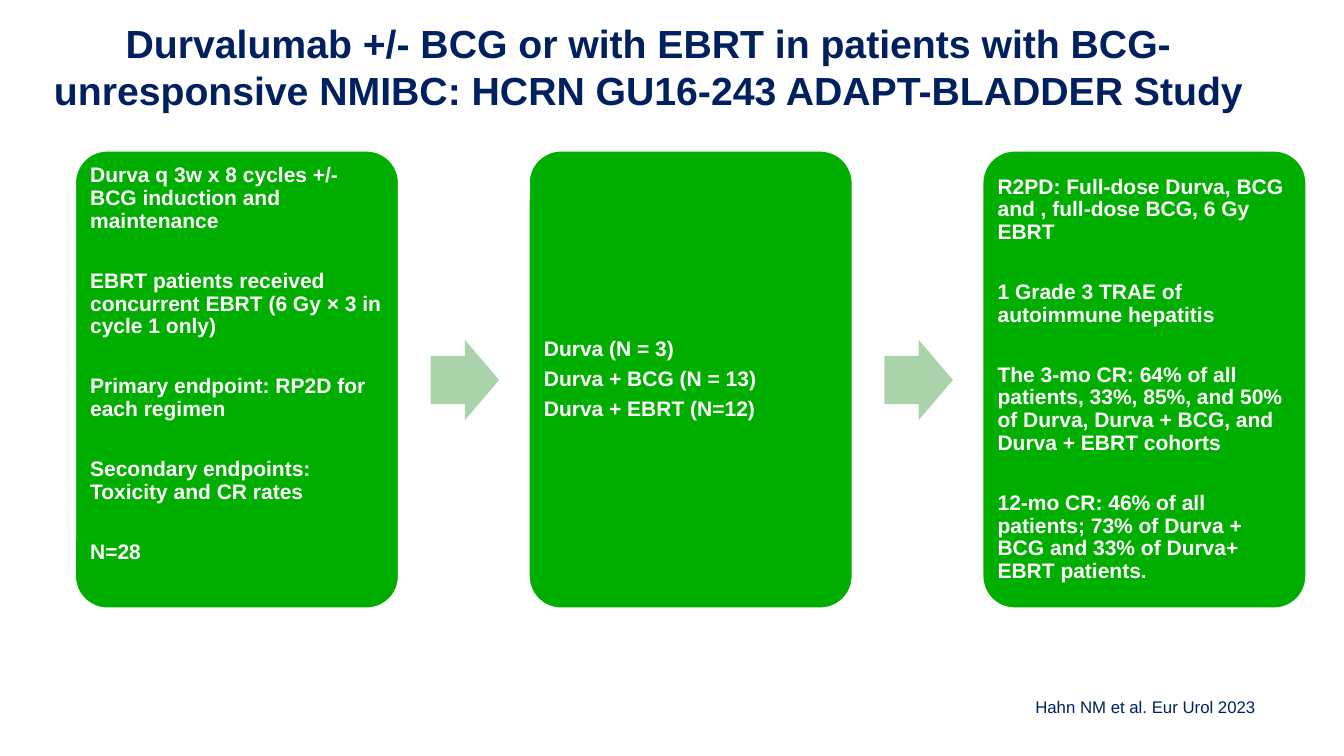
from pptx import Presentation
from pptx.dml.color import RGBColor
from pptx.enum.shapes import MSO_SHAPE as SHAPE
from pptx.enum.text import MSO_ANCHOR as ANCHOR, PP_ALIGN as ALIGN
from pptx.util import Inches, Pt

COLORS = {"navy": "002060", "green": "00AE00", "pale": "ABD3AB", "white": "FFFFFF"}


def rgb(name):
    return RGBColor.from_string(COLORS[name])


def style(paragraph, size, color, bold):
    font = paragraph.font
    font.name, font.size, font.bold = "Arial", Pt(size), bold
    font.color.rgb = rgb(color)


prs = Presentation()
prs.slide_width, prs.slide_height = Inches(13.33), Inches(7.5)
slide = prs.slides.add_slide(prs.slide_layouts[6])

title = slide.shapes.add_textbox(Inches(0.25), Inches(0.25), Inches(12.36), Inches(0.82)).text_frame
title.word_wrap = True
title.vertical_anchor = ANCHOR.MIDDLE
title.margin_left = title.margin_right = Inches(0.11)
title.text = (
    "Durvalumab +/- BCG or with EBRT in patients with BCG-unresponsive NMIBC: "
    "HCRN GU16-243 ADAPT-BLADDER Study"
)
title.paragraphs[0].alignment = ALIGN.CENTER
style(title.paragraphs[0], 28, "navy", True)

design = [
    "Durva q 3w x 8 cycles +/- BCG induction and maintenance",
    "EBRT patients received concurrent EBRT (6 Gy × 3 in cycle 1 only)",
    "Primary endpoint: RP2D for each regimen",
    "Secondary endpoints: Toxicity and CR rates",
    "N=28",
]
cohorts = ["Durva (N = 3)", "Durva + BCG (N = 13)", "Durva + EBRT (N=12)"]
results = [
    "R2PD: Full-dose Durva, BCG and , full-dose BCG, 6 Gy EBRT",
    "1 Grade 3 TRAE of autoimmune hepatitis",
    "The 3-mo CR: 64% of all patients, 33%, 85%, and 50% of Durva, Durva + BCG, "
    "and Durva + EBRT cohorts",
    "12-mo CR: 46% of all patients; 73% of Durva + BCG and 33% of Durva+ EBRT patients.",
]
stages = [(design, 26.7, 0.36), (cohorts, 5.25, 0.06), (results, 26.7, 0.06)]
step = 4.5

for i, (lines, gap, bottom) in enumerate(stages):
    card = slide.shapes.add_shape(
        SHAPE.ROUNDED_RECTANGLE, Inches(0.74 + i * step), Inches(1.49), Inches(3.22), Inches(4.55)
    )
    card.adjustments[0] = 0.1
    card.shadow.inherit = False
    card.fill.solid()
    card.fill.fore_color.rgb = rgb("green")
    card.line.color.rgb = rgb("white")
    card.line.width = Pt(2)

    body = card.text_frame
    body.word_wrap = True
    body.vertical_anchor = ANCHOR.MIDDLE
    body.margin_left = body.margin_right = body.margin_top = Inches(0.06)
    body.margin_bottom = Inches(bottom)
    body.text = "\n".join(lines)
    for paragraph in body.paragraphs:
        paragraph.alignment = ALIGN.LEFT
        paragraph.line_spacing = 0.9
        paragraph.space_after = Pt(gap)
        style(paragraph, 15, "white", True)

    if i < len(stages) - 1:
        arrow = slide.shapes.add_shape(
            SHAPE.RIGHT_ARROW, Inches(4.27 + i * step), Inches(3.37), Inches(0.68), Inches(0.8)
        )
        arrow.adjustments[0] = 0.6
        arrow.adjustments[1] = 0.5
        arrow.shadow.inherit = False
        arrow.fill.solid()
        arrow.fill.fore_color.rgb = rgb("pale")
        arrow.line.fill.background()

citation = slide.shapes.add_textbox(Inches(10.17), Inches(6.86), Inches(3.16), Inches(0.3)).text_frame
citation.word_wrap = True
citation.text = "Hahn NM et al. Eur Urol 2023"
style(citation.paragraphs[0], 12, "navy", False)

prs.save("out.pptx")
